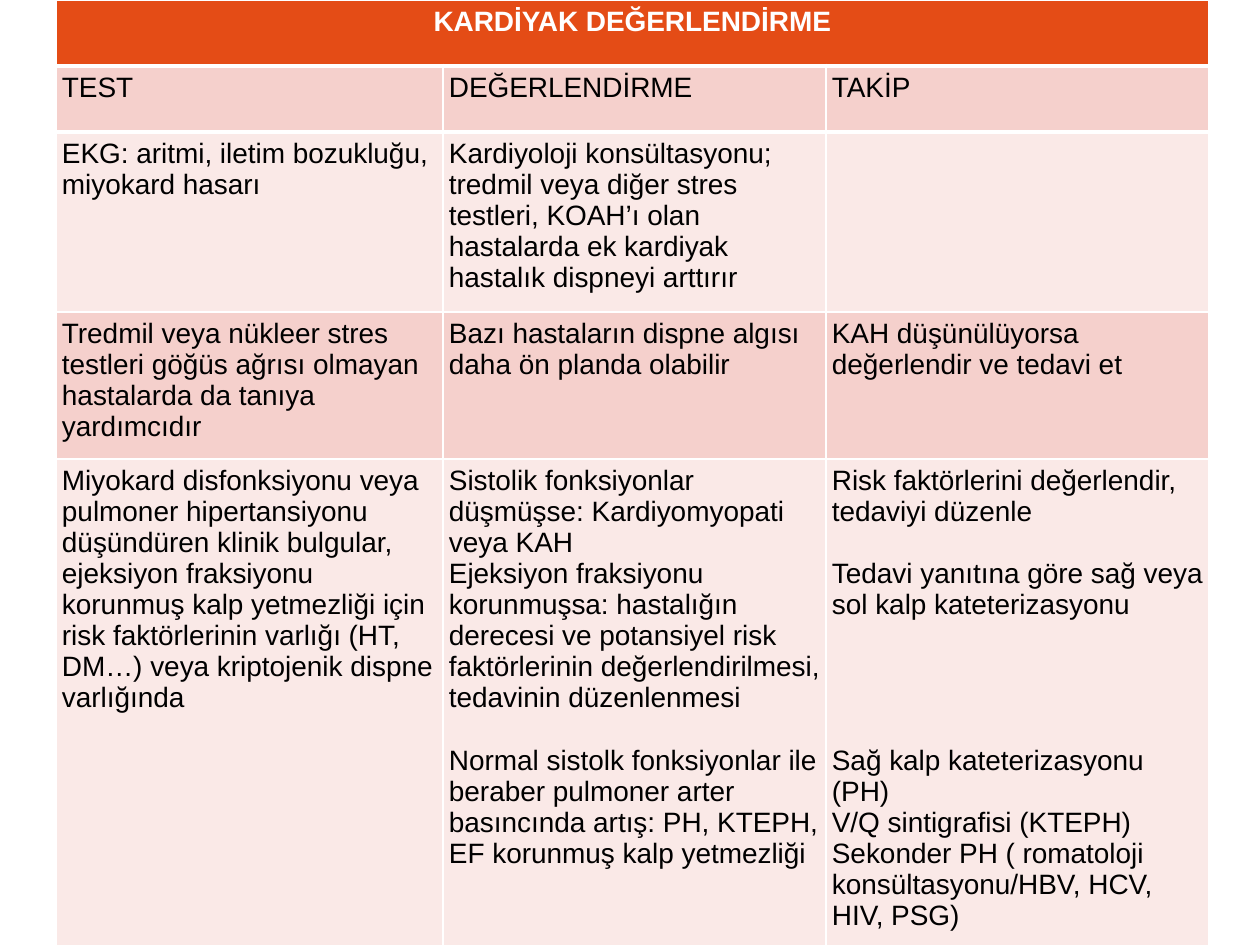
import pptx
import pptx.util
import pptx.dml.color
import pptx.enum.text
import lxml.etree

WIDE, HIGH = 1260, 945
SCALE = 914400 / 126
NS = "http://schemas.openxmlformats.org/drawingml/2006/main"


class Theme:
    font = "Arial"
    size = 16
    head = "E44C16"
    dark = "F5D0CC"
    light = "FAE9E7"
    white = "FFFFFF"
    ink = "000000"
    thin, thick = 1, 3


COLS = [387, 383, 383]
ROWS = [66, 66, 180, 147, 551]
PAD = 6

# Each cell is a list of paragraphs: text, or (text, points of space before)
CELLS = [
    [["KARDİYAK DEĞERLENDİRME"], [], []],
    [["TEST"], ["DEĞERLENDİRME"], ["TAKİP"]],
    [
        ["EKG: aritmi, iletim bozukluğu, miyokard hasarı"],
        ["Kardiyoloji konsültasyonu; tredmil veya diğer stres testleri, "
         "KOAH’ı olan hastalarda ek kardiyak hastalık dispneyi arttırır"],
        [],
    ],
    [
        ["Tredmil veya nükleer stres testleri göğüs ağrısı olmayan "
         "hastalarda da tanıya yardımcıdır"],
        ["Bazı hastaların dispne algısı daha ön planda olabilir"],
        ["KAH düşünülüyorsa değerlendir ve tedavi et"],
    ],
    [
        ["Miyokard disfonksiyonu veya pulmoner hipertansiyonu düşündüren "
         "klinik bulgular, ejeksiyon fraksiyonu korunmuş kalp yetmezliği için "
         "risk faktörlerinin varlığı (HT, DM…) veya kriptojenik dispne "
         "varlığında"],
        ["Sistolik fonksiyonlar düşmüşse: Kardiyomyopati veya KAH",
         "Ejeksiyon fraksiyonu korunmuşsa: hastalığın derecesi ve potansiyel "
         "risk faktörlerinin değerlendirilmesi, tedavinin düzenlenmesi",
         ("Normal sistolk fonksiyonlar ile beraber pulmoner arter basıncında "
          "artış: PH, KTEPH, EF korunmuş kalp yetmezliği", 18)],
        ["Risk faktörlerini değerlendir, tedaviyi düzenle",
         ("Tedavi yanıtına göre sağ veya sol kalp kateterizasyonu", 18),
         ("Sağ kalp kateterizasyonu (PH)", 71),
         "V/Q sintigrafisi (KTEPH)",
         "Sekonder PH ( romatoloji konsültasyonu/HBV, HCV, HIV, PSG)"],
    ],
]


def px(n):
    return pptx.util.Emu(round(n * SCALE))


def rgb(code):
    return pptx.dml.color.RGBColor.from_string(code)


def edge(cell, side, width):
    """Draw one white border of a cell."""
    props = cell._tc.get_or_add_tcPr()
    line = lxml.etree.SubElement(props, f"{{{NS}}}ln{side}",
                                 w=str(pptx.util.Pt(width)))
    fill = lxml.etree.SubElement(line, f"{{{NS}}}solidFill")
    lxml.etree.SubElement(fill, f"{{{NS}}}srgbClr", val=Theme.white)


def write(cell, paras, head):
    """Fill a cell with its paragraphs."""
    frame = cell.text_frame
    for i, item in enumerate(paras):
        text, gap = item if isinstance(item, tuple) else (item, 0)
        para = frame.paragraphs[0] if i == 0 else frame.add_paragraph()
        para.text = text
        if gap:
            para.space_before = pptx.util.Pt(gap)
        if head:
            para.alignment = pptx.enum.text.PP_ALIGN.CENTER
        para.font.name = Theme.font
        para.font.size = pptx.util.Pt(Theme.size)
        para.font.bold = head
        para.font.color.rgb = rgb(Theme.white if head else Theme.ink)


def style(cell, row):
    """Set the margins, borders and fill of a cell by its row."""
    cell.margin_left = cell.margin_right = px(PAD)
    cell.margin_top = cell.margin_bottom = px(PAD)
    edge(cell, "L", Theme.thin)
    edge(cell, "R", Theme.thin)
    edge(cell, "T", Theme.thick if row in (1, 2) else Theme.thin)
    edge(cell, "B", Theme.thick if row in (0, 1) else Theme.thin)
    cell.fill.solid()
    band = Theme.dark if row % 2 else Theme.light
    cell.fill.fore_color.rgb = rgb(Theme.head if row == 0 else band)


def grid(slide, left, top):
    """Place the assessment table with its corner at left, top."""
    table = slide.shapes.add_table(
        len(ROWS), len(COLS), px(left), px(top),
        px(sum(COLS)), px(sum(ROWS))).table
    table.horz_banding = table.first_row = False
    for col, width in zip(table.columns, COLS):
        col.width = px(width)
    for row, height in zip(table.rows, ROWS):
        row.height = px(height)
    for r, line in enumerate(CELLS):
        for c, paras in enumerate(line):
            cell = table.cell(r, c)
            style(cell, r)
            write(cell, paras, r == 0)
    # The heading spans all columns
    table.cell(0, 0).merge(table.cell(0, len(COLS) - 1))


def main():
    deck = pptx.Presentation()
    deck.slide_width, deck.slide_height = px(WIDE), px(HIGH)
    slide = deck.slides.add_slide(deck.slide_layouts[6])
    grid(slide, 56, 0)
    deck.save("out.pptx")


if __name__ == "__main__":
    main()
